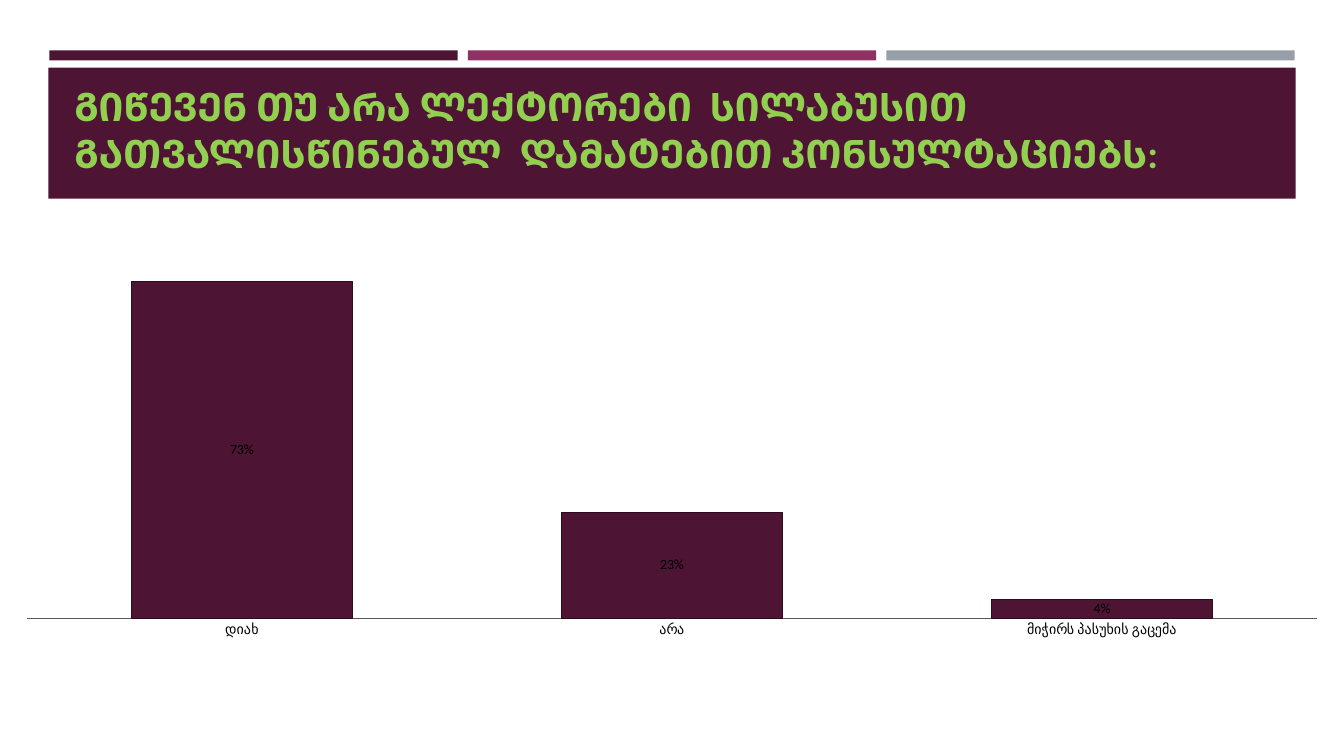
from dataclasses import dataclass

from pptx import Presentation
from pptx.chart.data import CategoryChartData
from pptx.dml.color import RGBColor
from pptx.enum.chart import XL_CHART_TYPE, XL_LABEL_POSITION, XL_TICK_MARK
from pptx.enum.shapes import MSO_SHAPE
from pptx.enum.text import MSO_ANCHOR, PP_ALIGN
from pptx.util import Inches, Pt


@dataclass(frozen=True)
class Theme:
    """Colours and type sizes of the slide."""
    plum: RGBColor = RGBColor(0x4D, 0x14, 0x34)
    dark_plum: RGBColor = RGBColor(0x2B, 0x0B, 0x1D)
    magenta: RGBColor = RGBColor(0x90, 0x31, 0x63)
    grey: RGBColor = RGBColor(0x96, 0x9F, 0xA7)
    axis: RGBColor = RGBColor(0x59, 0x59, 0x59)
    green: RGBColor = RGBColor(0x92, 0xD0, 0x50)
    black: RGBColor = RGBColor(0, 0, 0)
    font: str = "Calibri"
    title_size: Pt = Pt(28)
    chart_size: Pt = Pt(10)


THEME = Theme()
TITLE = "ᲒᲘᲬᲔᲕᲔᲜ ᲗᲣ ᲐᲠᲐ ᲚᲔᲥᲢᲝᲠᲔᲑᲘ  ᲡᲘᲚᲐᲑᲣᲡᲘᲗ  ᲒᲐᲗᲕᲐᲚᲘᲡᲬᲘᲜᲔᲑᲣᲚ  ᲓᲐᲛᲐᲢᲔᲑᲘᲗ ᲙᲝᲜᲡᲣᲚᲢᲐᲪᲘᲔᲑᲡ:"
ANSWERS = {"დიახ": 0.73, "არა": 0.23, "მიჭირს პასუხის გაცემა": 0.04}


def add_block(slide, left, top, width, height, color):
    """Draw a plain filled rectangle."""
    block = slide.shapes.add_shape(
        MSO_SHAPE.RECTANGLE, Inches(left), Inches(top), Inches(width), Inches(height))
    block.shadow.inherit = False
    block.fill.solid()
    block.fill.fore_color.rgb = color
    block.line.fill.background()


def add_stripes(slide, left, top, width, height):
    """Divide the box into three coloured stripes with equal gaps."""
    gap = 0.1
    colors = (THEME.plum, THEME.magenta, THEME.grey)
    stripe_width = (width - gap * (len(colors) - 1)) / len(colors)
    for index, color in enumerate(colors):
        add_block(slide, left + index * (stripe_width + gap), top, stripe_width, height, color)


def add_title_band(slide, left, top, width, height):
    """Draw the title band and set the question inside it."""
    add_block(slide, left, top, width, height, THEME.plum)
    title = slide.shapes.add_textbox(
        Inches(left + 0.16), Inches(top + 0.1), Inches(width - 0.31), Inches(height - 0.27))
    text_frame = title.text_frame
    text_frame.word_wrap = True
    text_frame.vertical_anchor = MSO_ANCHOR.BOTTOM
    text_frame.text = TITLE
    paragraph = text_frame.paragraphs[0]
    paragraph.alignment = PP_ALIGN.LEFT
    font = paragraph.runs[0].font
    font.name = THEME.font
    font.size = THEME.title_size
    font.bold = True
    font.color.rgb = THEME.green


def add_answer_chart(slide, left, top, width, height):
    """Draw the share of each answer as a column chart."""
    data = CategoryChartData(number_format="0%")
    data.categories = list(ANSWERS)
    data.add_series("Series 1", list(ANSWERS.values()))
    chart = slide.shapes.add_chart(
        XL_CHART_TYPE.COLUMN_STACKED, Inches(left), Inches(top),
        Inches(width), Inches(height), data).chart
    chart.has_legend = False
    chart.has_title = False
    chart.font.name = THEME.font
    chart.font.size = THEME.chart_size
    chart.font.color.rgb = THEME.black

    category_axis = chart.category_axis
    category_axis.major_tick_mark = XL_TICK_MARK.NONE
    category_axis.format.line.color.rgb = THEME.axis
    value_axis = chart.value_axis
    value_axis.visible = False
    value_axis.has_major_gridlines = False
    value_axis.minimum_scale = 0
    value_axis.maximum_scale = 0.8
    value_axis.tick_labels.number_format = "0%"
    value_axis.tick_labels.number_format_is_linked = False

    plot = chart.plots[0]
    plot.gap_width = 95
    plot.overlap = 100
    plot.vary_by_categories = False
    series = plot.series[0]
    series.format.fill.solid()
    series.format.fill.fore_color.rgb = THEME.plum
    series.format.line.color.rgb = THEME.dark_plum
    series.format.line.width = Pt(0.75)
    labels = series.data_labels
    labels.show_value = True
    labels.position = XL_LABEL_POSITION.CENTER
    labels.number_format = "0%"
    labels.number_format_is_linked = False


def main():
    """Build the slide and save it."""
    presentation = Presentation()
    presentation.slide_width = Inches(13.33)
    presentation.slide_height = Inches(7.5)
    slide = presentation.slides.add_slide(presentation.slide_layouts[6])
    add_stripes(slide, 0.49, 0.5, 12.35, 0.1)
    add_title_band(slide, 0.48, 0.67, 12.37, 1.3)
    add_answer_chart(slide, 0, 2.39, 13.33, 4.02)
    presentation.save("out.pptx")


if __name__ == "__main__":
    main()
